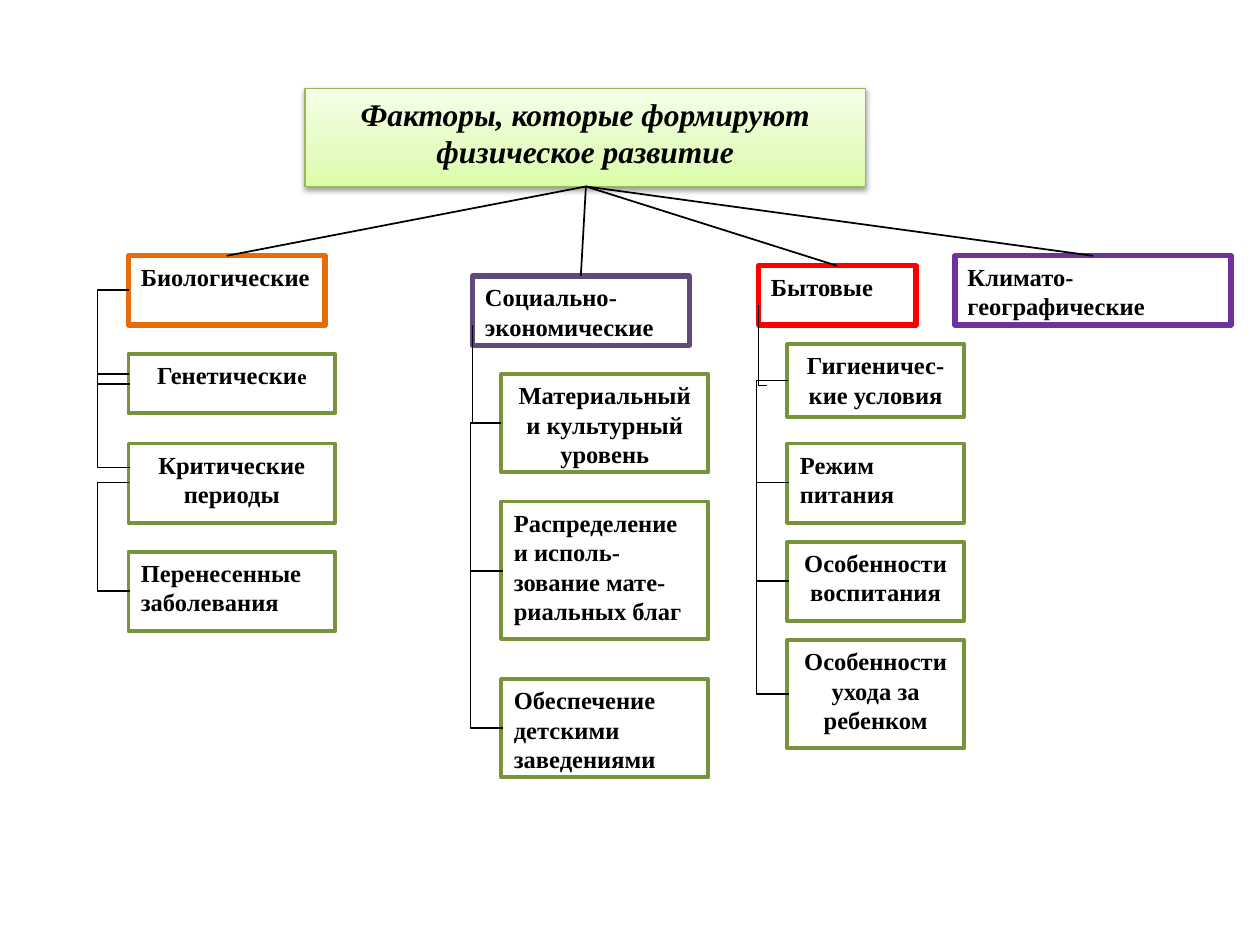
from copy import deepcopy
from itertools import pairwise

from pptx import Presentation
from pptx.dml.color import RGBColor
from pptx.enum.shapes import MSO_CONNECTOR as CONN, MSO_SHAPE as SHAPE
from pptx.enum.text import MSO_ANCHOR as ANCHOR, PP_ALIGN as ALIGN
from pptx.oxml import parse_xml
from pptx.oxml.ns import nsdecls, qn
from pptx.util import Inches, Pt

FONT = "Times New Roman"
BLACK, WHITE, GREEN = "000000", "FFFFFF", "77933C"
L, C, J = ALIGN.LEFT, ALIGN.CENTER, ALIGN.JUSTIFY
HUB = (4.65, 1.48)  # bottom centre of the title, where the branches start
STUB = 0.25  # how far a bracket stands out to the left of its boxes

# text, left, top, width, height, line colour, alignment
CATEGORIES = [
    ("Биологические", 1.02, 2.03, 1.56, 0.55, "E46C0A", L),
    ("Социально-экономические", 3.75, 2.19, 1.72, 0.55, "604A7B", J),
    ("Бытовые", 6.02, 2.11, 1.25, 0.47, "FF0000", L),
    ("Климато-географические", 7.58, 2.03, 2.19, 0.55, "7030A0", L),
]

# left, width, then the boxes of the column: runs, top, height, alignment
COLUMNS = [
    (1.02, 1.64, [
        ([("Генетически", 14), ("е", 12)], 2.81, 0.47, C),
        ([("Критические периоды", 14)], 3.52, 0.63, C),
        ([("Перенесенные заболевания", 14)], 4.38, 0.63, L),
    ]),
    (3.98, 1.64, [
        ([("Материальный и культурный уровень", 14)], 2.97, 0.78, C),
        ([("Распределение и исполь-зование мате-риальных благ", 14)], 3.98, 1.09, L),
        ([("Обеспечение детскими заведениями", 14)], 5.39, 0.78, L),
    ]),
    (6.25, 1.4, [
        ([("Гигиеничес-кие условия", 14)], 2.73, 0.58, C),
        ([("Режим питания", 14)], 3.52, 0.63, L),
        ([("Особенности воспитания", 14)], 4.3, 0.63, C),
        ([("Особенности ухода за ребенком", 14)], 5.08, 0.86, C),
    ]),
]

# Brackets: left edge of the boxes and the heights they join
BIO_BRACKETS = [(2.3, 3.05), (2.97, 3.71), (3.83, 4.69)]
SOCIAL_STOPS = [3.36, 4.53, 5.78]
HOME_STOPS = [3.02, 3.83, 4.61, 5.51]
# Corners: from a sub-box sideways, then up to its category
CORNERS = [((3.98, 3.36), (3.75, 2.58)), ((6.09, 3.06), (6.02, 2.42))]


def rgb(value):
    return RGBColor.from_string(value)


def add_run(p, text, size, italic=False):
    r = p.add_run()
    r.text = text
    f = r.font
    f.name, f.size, f.bold, f.italic = FONT, Pt(size), True, italic
    f.color.rgb = rgb(BLACK)


def place(sp, left, top, width, height):
    sp.left, sp.top = Inches(left), Inches(top)
    sp.width, sp.height = Inches(width), Inches(height)


def set_line(sp, color, width):
    sp.line.color.rgb = rgb(color)
    sp.line.width = Pt(width)


def add_title(slide):
    sp = slide.shapes.title
    place(sp, 2.42, 0.7, 4.45, 0.78)
    # Three-stop gradient, lightest at the top
    sp.fill.gradient()
    stops = sp._element.spPr.find(".//" + qn("a:gsLst"))
    stops.append(deepcopy(stops[-1]))
    colors = [(0, "DAFDA7"), (0.35, "E4FCC2"), (1, "F5FFE7")]
    for stop, (position, color) in zip(sp.fill.gradient_stops, colors):
        stop.position = position
        stop.color.rgb = rgb(color)
    sp.fill.gradient_angle = 90
    set_line(sp, "98B955", 0.75)
    # Soft shadow below
    sp._element.spPr.append(parse_xml(
        f'<a:effectLst {nsdecls("a")}>'
        '<a:outerShdw blurRad="40000" dist="20000" dir="5400000" rotWithShape="0">'
        '<a:srgbClr val="000000"><a:alpha val="38000"/></a:srgbClr>'
        '</a:outerShdw></a:effectLst>'))
    tf = sp.text_frame
    tf.word_wrap, tf.vertical_anchor = True, ANCHOR.TOP
    lines = ["Факторы, которые формируют", "физическое развитие"]
    for p, text in zip([tf.paragraphs[0], tf.add_paragraph()], lines):
        p.alignment = C
        add_run(p, text, 18, italic=True)


def add_box(slide, runs, left, top, width, height, color, weight, align):
    sp = slide.shapes.add_shape(SHAPE.RECTANGLE, 0, 0, 0, 0)
    place(sp, left, top, width, height)
    sp.shadow.inherit = False
    sp.fill.solid()
    sp.fill.fore_color.rgb = rgb(WHITE)
    set_line(sp, color, weight)
    tf = sp.text_frame
    tf.word_wrap, tf.vertical_anchor = True, ANCHOR.TOP
    p = tf.paragraphs[0]
    p.alignment, p.space_after = align, Pt(10)
    for text, size in runs:
        add_run(p, text, size)


def add_link(slide, start, end, kind=CONN.STRAIGHT):
    cx = slide.shapes.add_connector(kind, *map(Inches, start + end))
    set_line(cx, BLACK, 1)
    cx._element.spPr.append(parse_xml(f'<a:effectLst {nsdecls("a")}/>'))
    return cx._element.spPr.find(qn("a:prstGeom"))


def add_bracket(slide, x, top, bottom):
    span = 0.01
    geom = add_link(slide, (x, top), (x + span, bottom), CONN.ELBOW)
    guides = geom.get_or_add_avLst()
    guides.append(parse_xml(
        f'<a:gd {nsdecls("a")} name="adj1" fmla="val {round(-STUB / span * 100000)}"/>'))


def add_corner(slide, start, end):
    add_link(slide, start, end, CONN.ELBOW).set("prst", "bentConnector2")


def main():
    prs = Presentation()
    prs.slide_width, prs.slide_height = Inches(10), Inches(7.5)
    slide = prs.slides.add_slide(prs.slide_layouts[5])
    add_title(slide)

    # Categories and their sub-boxes
    for text, left, top, width, height, color, align in CATEGORIES:
        add_box(slide, [(text, 14)], left, top, width, height, color, 3, align)
    for left, width, boxes in COLUMNS:
        for runs, top, height, align in boxes:
            add_box(slide, runs, left, top, width, height, GREEN, 2.25, align)

    # Branches from the title to the top centre of each category
    for _, left, top, width, *_ in CATEGORIES:
        add_link(slide, HUB, (left + width / 2, top))

    # Brackets and corners down the columns
    spans = [BIO_BRACKETS, pairwise(SOCIAL_STOPS), pairwise(HOME_STOPS)]
    for (left, *_), pairs in zip(COLUMNS, spans):
        for top, bottom in pairs:
            add_bracket(slide, left, top, bottom)
    for start, end in CORNERS:
        add_corner(slide, start, end)

    prs.save("out.pptx")


if __name__ == "__main__":
    main()
